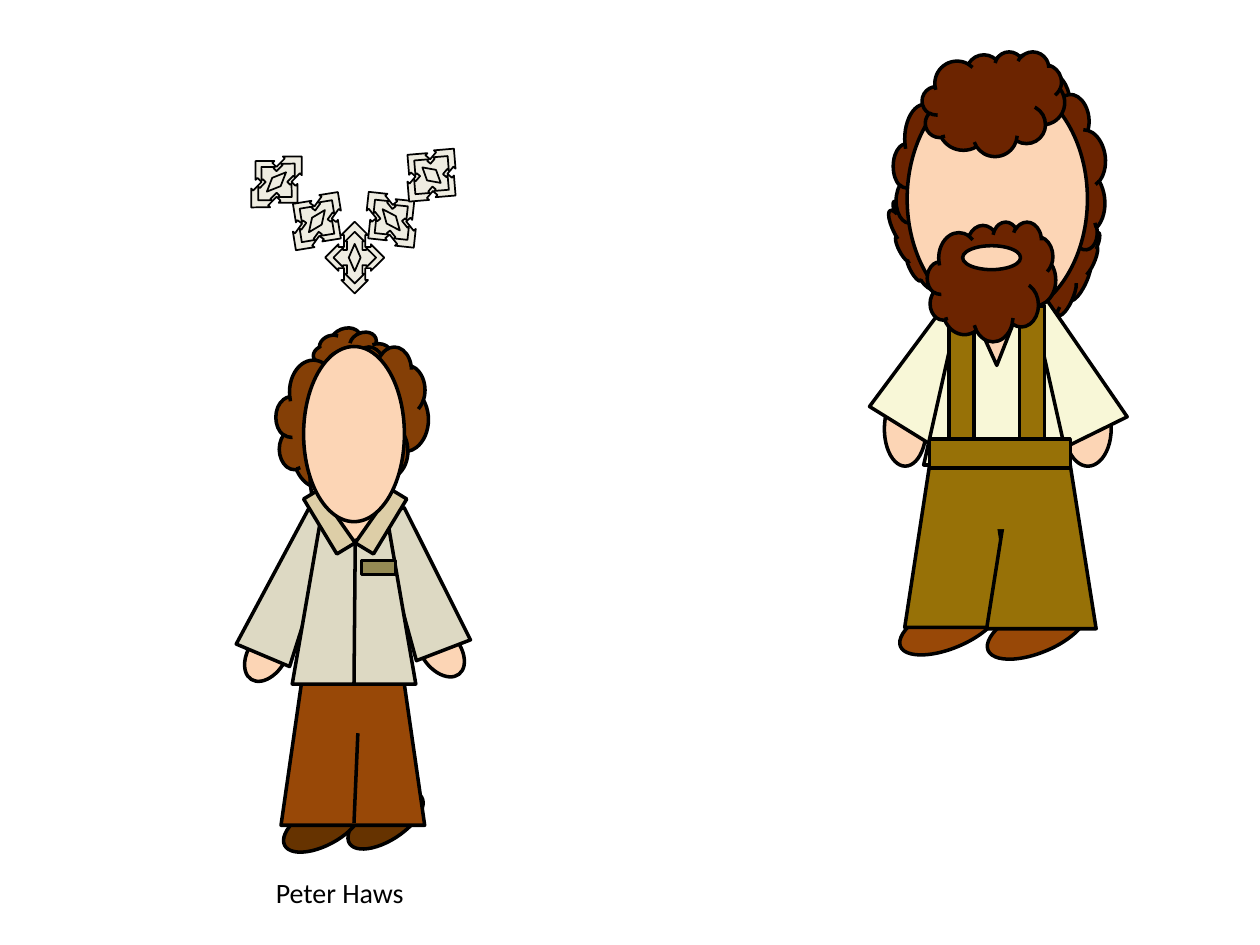
from lxml import etree
from pptx import Presentation
from pptx.dml.color import RGBColor
from pptx.enum.shapes import MSO_CONNECTOR, MSO_SHAPE
from pptx.oxml.ns import qn
from pptx.util import Pt

SKIN, BLACK, SILVER = "FCD5B5", "000000", "EEECE1"
DARK_HAIR, HAIR = "6C2400", "843F06"
CREAM, OLIVE, RUST = "F8F7D7", "977107", "984807"
KHAKI, COLLAR, TAG, SHOE = "DDD9C3", "DDCEA7", "948A54", "663300"

CLOUD, OVAL, TRAPEZOID = MSO_SHAPE.CLOUD, MSO_SHAPE.OVAL, MSO_SHAPE.TRAPEZOID
RECT, FLAP = MSO_SHAPE.RECTANGLE, MSO_SHAPE.FLOWCHART_MANUAL_INPUT


def rgb(value):
    """Turn a hex string into a colour."""
    return RGBColor.from_string(value)


def add_part(group, kind, box, fill, rot=0, adj=(), line=2, flip=""):
    """Add one filled shape; box is left, top, width, height in points."""
    sp = group.shapes.add_shape(kind, *[Pt(v) for v in box])
    sp.shadow.inherit = False
    sp.rotation = rot
    for i, value in enumerate(adj):
        sp.adjustments[i] = value
    for axis in flip:
        sp._element.spPr.get_or_add_xfrm().set("flip" + axis, "1")
    sp.fill.solid()
    sp.fill.fore_color.rgb = rgb(fill)
    if line:
        sp.line.color.rgb = rgb(BLACK)
        sp.line.width = Pt(line)
    else:
        sp.line.fill.background()
    return sp


def add_seam(group, x1, y1, x2, y2):
    """Add a straight black seam line."""
    seam = group.shapes.add_connector(MSO_CONNECTOR.STRAIGHT, Pt(x1), Pt(y1), Pt(x2), Pt(y2))
    seam.line.color.rgb = rgb(BLACK)
    seam.line.width = Pt(2)
    etree.SubElement(seam._element.spPr, qn("a:effectLst"))


def add_text(s, text, box, size=16, font="Calibri", color=BLACK):
    """Add a wrapped text box."""
    tf = s.shapes.add_textbox(*[Pt(v) for v in box]).text_frame
    tf.word_wrap = True
    r = tf.paragraphs[0].add_run()
    r.text = text
    r.font.size, r.font.name = Pt(size), font
    r.font.color.rgb = rgb(color)


def add_necklace(s, left, top):
    """Place five ornaments in a V, each of nested arrows and a diamond."""
    ornaments = [
        (17, 22, 33.8, 41, 44.7),
        (40.1, 44.4, 33.8, 41, 35.8),
        (61.7, 65.2, 33.8, 41, 0),
        (82.6, 43.6, 33.8, 41, 321.1),
        (105.6, 18.1, 39.6, 36, 310.2),
    ]
    layers = [
        (MSO_SHAPE.QUAD_ARROW, 1, 1, (0.358, 0.225, 0.225)),
        (MSO_SHAPE.QUAD_ARROW, 0.72, 0.72, (0.358, 0.225, 0.225)),
        (MSO_SHAPE.DIAMOND, 0.2, 0.38, ()),
    ]
    group = s.shapes.add_group_shape()
    for x, y, width, height, rot in ornaments:
        for kind, x_scale, y_scale, adj in layers:
            w, h = width * x_scale, height * y_scale
            box = (left + x - w / 2, top + y - h / 2, w, h)
            add_part(group, kind, box, SILVER, rot, adj, line=1)


def add_bearded_man(s, left, top):
    """Place the bearded man with braces."""
    group = s.shapes.add_group_shape()

    def part(kind, x, y, w, h, fill, **fmt):
        """Add a part measured from the figure's corner."""
        add_part(group, kind, (left + x, top + y, w, h), fill, **fmt)

    part(OVAL, 82.6, 300.8, 25.9, 60.5, RUST, rot=67.5)
    part(CLOUD, 100.6, 98.4, 23.8, 59.8, DARK_HAIR, rot=24.4)
    part(CLOUD, 16.4, 80.4, 23.8, 59.8, DARK_HAIR, rot=332.7)
    part(CLOUD, 13.5, 22.1, 73.4, 92.9, DARK_HAIR)
    part(CLOUD, 55.2, 38, 105.8, 53.3, DARK_HAIR, rot=263.1)
    part(CLOUD, 32.9, 2, 73.4, 54.7, DARK_HAIR)
    part(OVAL, 32.9, 298.6, 25.2, 60.5, RUST, rot=67.5)
    part(OVAL, 111.4, 194.9, 26.6, 42.5, SKIN)
    part(OVAL, 8.4, 194.9, 23.8, 42.5, SKIN)
    part(TRAPEZOID, 81.2, 139.5, 49.7, 85, CREAM, rot=333.8)
    part(TRAPEZOID, 16.4, 145.2, 49.7, 77, CREAM, rot=31.8, adj=[0.131])
    part(TRAPEZOID, 30.8, 144.5, 82.8, 92.2, CREAM)
    part(MSO_SHAPE.ISOSCELES_TRIANGLE, 56, 143.1, 31, 36.7, SKIN, rot=180, adj=[0.465])
    part(TRAPEZOID, 20, 227.3, 62.6, 102.2, OLIVE)
    part(TRAPEZOID, 66.8, 227.3, 62.6, 103, OLIVE, adj=[0.26])
    part(MSO_SHAPE.ROUNDED_RECTANGLE, 43, 230.2, 61.9, 43.2, OLIVE, line=0)
    for x in (45.2, 85.5):
        part(RECT, x, 146, 14.4, 81, OLIVE)
    part(RECT, 66, 189.9, 16.6, 80.6, OLIVE, rot=90)
    part(OVAL, 26.4, 29.3, 20.2, 20.9, DARK_HAIR, line=0)
    part(OVAL, 90.5, 12.8, 20.9, 28.8, DARK_HAIR, line=0)
    part(OVAL, 21.4, 15.6, 103, 138.2, SKIN)
    part(CLOUD, 32.9, 97.7, 73.4, 68.4, DARK_HAIR)
    part(OVAL, 53.1, 111.4, 33.1, 13.7, SKIN)
    part(CLOUD, 30, 0.5, 81.4, 59.8, DARK_HAIR)


def add_shirt_man(s, left, top):
    """Place the man with the collared shirt."""
    group = s.shapes.add_group_shape()

    def part(kind, x, y, w, h, fill, **fmt):
        """Add a part measured from the figure's corner."""
        add_part(group, kind, (left + x, top + y, w, h), fill, **fmt)

    part(CLOUD, 40.4, 0.2, 43.9, 42.5, HAIR, rot=249)
    part(CLOUD, 16.7, 11, 87.1, 85.7, HAIR)
    part(OVAL, 100.2, 168, 21.6, 33.8, SKIN, rot=322.3)
    part(OVAL, 0.8, 170.1, 21.6, 33.8, SKIN, rot=32.2)
    part(OVAL, 67.8, 257.2, 23, 49, SHOE, rot=57)
    part(OVAL, 31.8, 260.1, 23, 49, SHOE, rot=61.9)
    part(TRAPEZOID, 19.6, 183.8, 82.1, 100.8, RUST, adj=[0.177])
    part(TRAPEZOID, 10.2, 101, 33.1, 90, KHAKI, rot=22.9)
    part(TRAPEZOID, 80.8, 103.2, 33.1, 84.2, KHAKI, rot=339)
    part(TRAPEZOID, 26, 101.7, 70.6, 102.2, KHAKI)
    part(OVAL, 36.1, 44.8, 43.9, 77.8, SKIN)
    add_seam(group, left + 62, top + 124, left + 61.3, top + 204)
    part(TRAPEZOID, 65.6, 133.4, 19.4, 7.9, TAG, adj=[0])
    part(FLAP, 58.4, 104.6, 36.7, 12.2, COLLAR, rot=121.2, flip="V")
    part(FLAP, 28.9, 104.6, 36.7, 12.2, COLLAR, rot=238.8, flip="HV")
    part(OVAL, 32.5, 11, 57.6, 100.1, SKIN)
    add_seam(group, left + 63.5, top + 232, left + 61.3, top + 283.2)


def main():
    """Build the slide and save it."""
    prs = Presentation()
    prs.slide_width, prs.slide_height = Pt(720), Pt(540)
    s = prs.slides.add_slide(prs.slide_layouts[6])
    add_necklace(s, 141, 82)
    add_bearded_man(s, 497, 29)
    add_text(s, "Peter Haws", (150.5, 496.8, 222.5, 26.6))
    add_shirt_man(s, 141, 187)
    prs.save("out.pptx")


if __name__ == "__main__":
    main()
